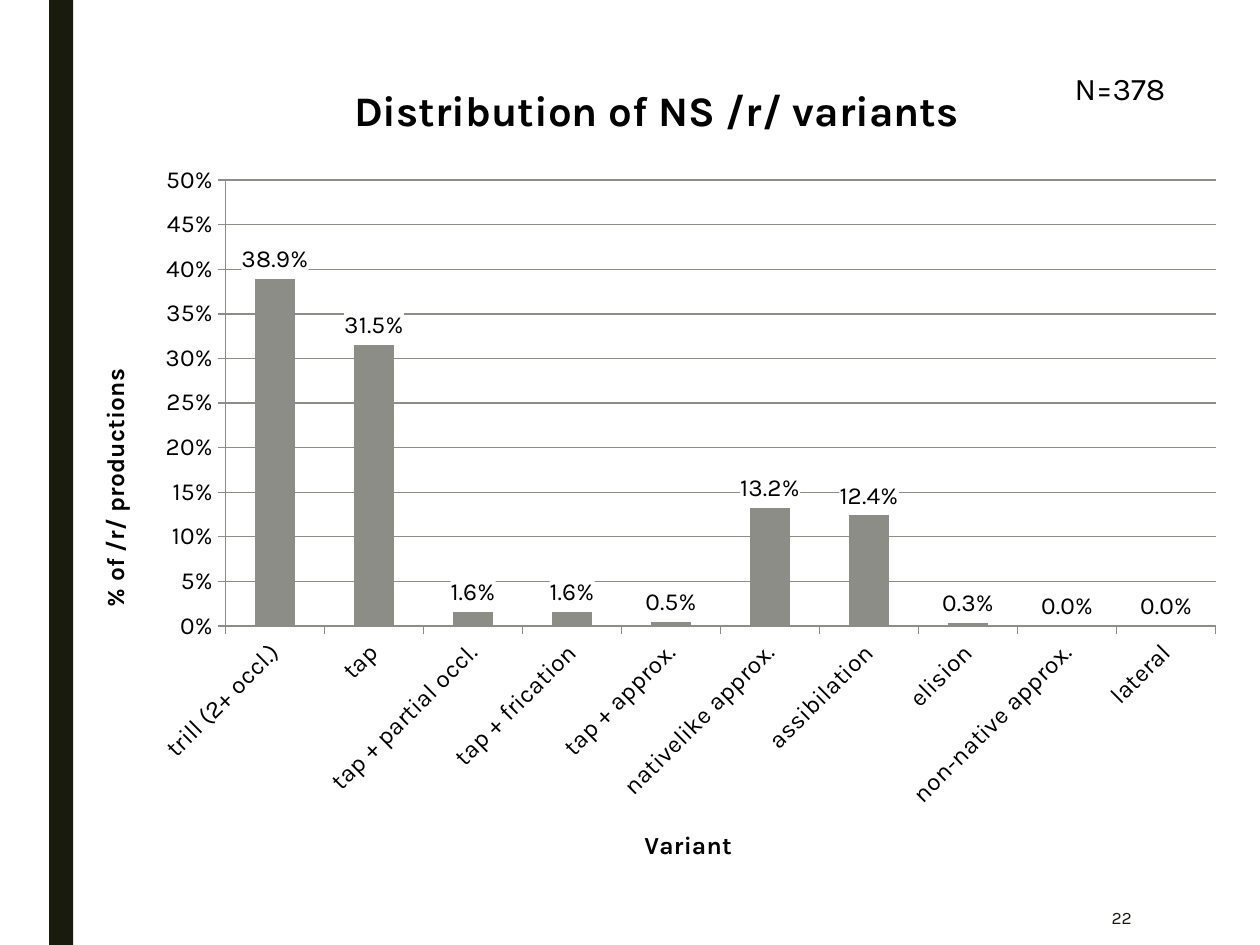
import pptx
import pptx.chart.data
import pptx.dml.color
import pptx.enum.chart
import pptx.enum.shapes
import pptx.enum.text
import pptx.oxml
import pptx.oxml.ns
import pptx.util
from pptx.util import Inches

FONT = "Karla"
BLACK = pptx.dml.color.RGBColor(0x00, 0x00, 0x00)
DARK = pptx.dml.color.RGBColor(0x19, 0x1B, 0x0E)
GRAY = pptx.dml.color.RGBColor(0x8C, 0x8D, 0x86)
CHART_LEFT, CHART_TOP, CHART_WIDTH, CHART_HEIGHT = 0.58, 0.42, 9.25, 6.64
LABEL_BACKGROUND = (
    f'<c:spPr {pptx.oxml.ns.nsdecls("c", "a")}>'
    '<a:solidFill><a:srgbClr val="FFFFFF"/></a:solidFill></c:spPr>'
)

VARIANTS = {
    "trill (2+ occl.)": 0.389,
    "tap": 0.315,
    "tap + partial occl.": 0.016,
    "tap + frication": 0.016,
    "tap + approx.": 0.005,
    "nativelike approx.": 0.132,
    "assibilation": 0.124,
    "elision": 0.003,
    "non-native approx.": 0,
    "lateral": 0,
}


def format_font(font, size, color=BLACK, bold=False):
    font.name = FONT
    font.size = pptx.util.Pt(size)
    font.bold = bold
    font.color.rgb = color


def write_text(text_frame, text, *, size, color=BLACK, bold=False, align=None):
    paragraph = text_frame.paragraphs[0]
    paragraph.alignment = align
    run = paragraph.add_run()
    run.text = text
    format_font(run.font, size, color, bold)


def add_text_box(slide, left, top, width, height, text, *, anchor, **text_format):
    box = slide.shapes.add_textbox(Inches(left), Inches(top), Inches(width), Inches(height))
    box.text_frame.word_wrap = True
    box.text_frame.vertical_anchor = anchor
    write_text(box.text_frame, text, **text_format)


def add_side_bar(slide):
    bar = slide.shapes.add_shape(
        pptx.enum.shapes.MSO_SHAPE.RECTANGLE, Inches(0.39), 0, Inches(0.19), Inches(7.5)
    )
    bar.shadow.inherit = False
    bar.fill.solid()
    bar.fill.fore_color.rgb = DARK
    bar.line.fill.background()


def set_layout(element, position, left, top, width=None, height=None):
    for old_layout in element.findall(pptx.oxml.ns.qn("c:layout")):
        element.remove(old_layout)
    places = {
        "xMode": "edge",
        "yMode": "edge",
        "x": (left - CHART_LEFT) / CHART_WIDTH,
        "y": (top - CHART_TOP) / CHART_HEIGHT,
    }
    if width and height:
        places = {"layoutTarget": "inner", **places}
        places.update(w=width / CHART_WIDTH, h=height / CHART_HEIGHT)
    settings = "".join(f'<c:{name} val="{value}"/>' for name, value in places.items())
    element.insert(position, pptx.oxml.parse_xml(
        f'<c:layout {pptx.oxml.ns.nsdecls("c")}>'
        f'<c:manualLayout>{settings}</c:manualLayout></c:layout>'
    ))


def add_title(owner, text, size, left, top):
    owner.has_title = True
    title = owner.chart_title if hasattr(owner, "chart_title") else owner.axis_title
    write_text(title.text_frame, text, size=size, bold=True)
    set_layout(title._element, 1, left, top)
    return title


def format_axis(axis):
    axis.major_tick_mark = pptx.enum.chart.XL_TICK_MARK.OUTSIDE
    axis.minor_tick_mark = pptx.enum.chart.XL_TICK_MARK.NONE
    format_font(axis.tick_labels.font, 14)
    axis.format.line.color.rgb = GRAY


def format_series(plot):
    plot.gap_width = 150
    plot.vary_by_categories = False
    series = plot.series[0]
    series.format.fill.solid()
    series.format.fill.fore_color.rgb = GRAY
    labels = series.data_labels
    labels.show_value = True
    labels.number_format = "0.0%"
    labels.number_format_is_linked = False
    labels.position = pptx.enum.chart.XL_LABEL_POSITION.OUTSIDE_END
    format_font(labels.font, 14)
    number_format = labels._element.find(pptx.oxml.ns.qn("c:numFmt"))
    number_format.addnext(pptx.oxml.parse_xml(LABEL_BACKGROUND))


def add_variant_chart(slide):
    chart_data = pptx.chart.data.CategoryChartData()
    chart_data.categories = list(VARIANTS)
    chart_data.add_series("Series 1", list(VARIANTS.values()))
    chart = slide.shapes.add_chart(
        pptx.enum.chart.XL_CHART_TYPE.COLUMN_CLUSTERED,
        Inches(CHART_LEFT), Inches(CHART_TOP),
        Inches(CHART_WIDTH), Inches(CHART_HEIGHT), chart_data,
    ).chart
    chart.has_legend = False
    format_font(chart.font, 10)
    add_title(chart, "Distribution of NS /r/ variants", 24, 2.75, 0.6)

    category_axis, value_axis = chart.category_axis, chart.value_axis
    format_axis(category_axis)
    category_axis._element.txPr.bodyPr.set("rot", "-2700000")
    add_title(category_axis, "Variant", 14, 5.08, 6.55)

    format_axis(value_axis)
    value_axis.minimum_scale = 0
    value_axis.maximum_scale = 0.5
    value_axis.major_unit = 0.05
    value_axis.has_major_gridlines = True
    value_axis.major_gridlines.format.line.color.rgb = GRAY
    value_axis.tick_labels.number_format = "0%"
    value_axis.tick_labels.number_format_is_linked = False
    value_title = add_title(value_axis, "% of /r/ productions", 14, 0.75, 2.89)
    value_title.text_frame._txBody.bodyPr.set("rot", "-5400000")

    format_series(chart.plots[0])
    set_layout(chart._chartSpace.chart.plotArea, 0, 1.79, 1.43, 7.86, 3.54)


def main():
    presentation = pptx.Presentation()
    presentation.slide_width = Inches(10)
    presentation.slide_height = Inches(7.5)
    slide = presentation.slides.add_slide(presentation.slide_layouts[6])
    add_side_bar(slide)
    add_text_box(
        slide, 7.77, 7.06, 1.31, 0.44, "22", size=10, color=DARK,
        align=pptx.enum.text.PP_ALIGN.RIGHT, anchor=pptx.enum.text.MSO_ANCHOR.MIDDLE,
    )
    add_variant_chart(slide)
    add_text_box(
        slide, 8.43, 0.5, 1.16, 0.4, "N=378", size=18,
        anchor=pptx.enum.text.MSO_ANCHOR.TOP,
    )
    presentation.save("out.pptx")


if __name__ == "__main__":
    main()
